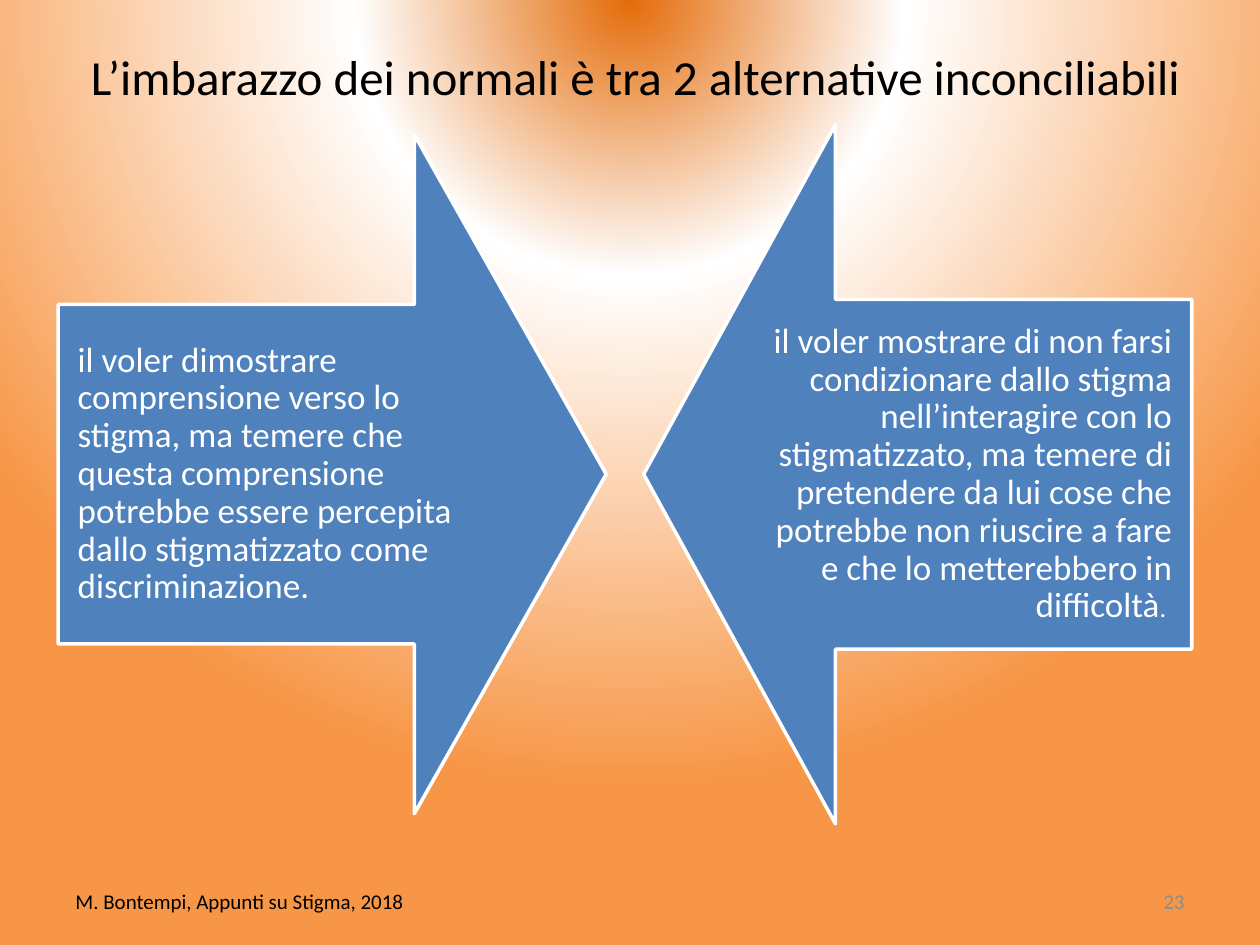
from pptx import Presentation
from pptx.dml.color import RGBColor
from pptx.enum.shapes import MSO_SHAPE as Shape
from pptx.enum.text import MSO_ANCHOR as Anchor, PP_ALIGN as Align
from pptx.oxml import parse_xml
from pptx.oxml.ns import nsdecls
from pptx.util import Pt

BLACK = RGBColor(0x00, 0x00, 0x00)
WHITE = RGBColor(0xFF, 0xFF, 0xFF)
GREY = RGBColor(0x8C, 0x8C, 0x8C)
BLUE = RGBColor(0x4F, 0x81, 0xBD)
DARK_ORANGE = RGBColor(0xE4, 0x6C, 0x0A)
ORANGE = RGBColor(0xF7, 0x96, 0x46)

ARROW_MIDDLE = 271
ARROW_WIDTH = 313.2
LABEL_WIDTH = 258.5
LABEL_INSET = 11.2


class SlideBuilder:
    font = "Calibri"

    def __init__(self, presentation):
        self.slide = presentation.slides.add_slide(presentation.slide_layouts[5])

    def background(self, stops):
        self.slide.background.fill.solid()
        properties = self.slide._element.xpath("./p:cSld/p:bg/p:bgPr")[0]
        stop_list = "".join(
            f'<a:gs pos="{percent * 1000}"><a:srgbClr val="{color}"/></a:gs>'
            for percent, color in stops
        )
        gradient = parse_xml(
            f'<a:gradFill {nsdecls("a")} rotWithShape="1"><a:gsLst>{stop_list}</a:gsLst>'
            '<a:path path="circle"><a:fillToRect l="50000" t="-80000" r="50000" b="180000"/>'
            "</a:path></a:gradFill>"
        )
        properties.replace(properties[0], gradient)

    def place(self, shape, left, top, width, height):
        box = {"left": left, "top": top, "width": width, "height": height}
        for name, value in box.items():
            setattr(shape, name, Pt(value))

    def fill_text(self, shape, runs, color, align=Align.LEFT, spacing=1.0, inset=None):
        frame = shape.text_frame
        settings = {"word_wrap": True, "vertical_anchor": Anchor.MIDDLE}
        if inset is not None:
            for side in ("left", "top", "right", "bottom"):
                settings[f"margin_{side}"] = Pt(inset)
        for name, value in settings.items():
            setattr(frame, name, value)
        paragraph = frame.paragraphs[0]
        paragraph.alignment = align
        paragraph.line_spacing = spacing
        for text, size in runs:
            run = paragraph.add_run()
            run.text = text
            for name, value in {"name": self.font, "size": Pt(size)}.items():
                setattr(run.font, name, value)
            run.font.color.rgb = color

    def title(self, text, box, size):
        shape = self.slide.shapes.title
        self.place(shape, *box)
        self.fill_text(shape, [(text, size)], BLACK, Align.CENTER)

    def text(self, runs, box, color, **style):
        shape = self.slide.shapes.add_textbox(*map(Pt, box))
        self.fill_text(shape, runs, color, **style)

    def arrow(self, kind, left, height):
        top = ARROW_MIDDLE - height / 2
        shape = self.slide.shapes.add_shape(
            kind, Pt(left), Pt(top), Pt(ARROW_WIDTH), Pt(height)
        )
        shape.adjustments[0] = 0.5
        shape.adjustments[1] = 0.35
        shape.shadow.inherit = False
        shape.fill.solid()
        shape.fill.fore_color.rgb = BLUE
        shape.line.color.rgb = WHITE
        shape.line.width = Pt(2)

    def argument(self, kind, arrow_left, label_left, height, runs, align):
        self.arrow(kind, arrow_left, height)
        label_height = height / 2
        box = (label_left, ARROW_MIDDLE - label_height / 2, LABEL_WIDTH, label_height)
        self.text(runs, box, WHITE, align=align, spacing=0.9, inset=LABEL_INSET)


def main():
    presentation = Presentation()
    presentation.slide_width = Pt(720)
    presentation.slide_height = Pt(540)

    builder = SlideBuilder(presentation)
    builder.background([(0, DARK_ORANGE), (35, WHITE), (100, ORANGE)])
    builder.title(
        "L’imbarazzo dei normali è tra 2 alternative inconciliabili",
        (31, -1.5, 664, 90), 28,
    )
    builder.argument(
        Shape.RIGHT_ARROW, 33.2, 33.2, 388,
        [("il voler dimostrare comprensione verso lo stigma, ma temere che questa "
          "comprensione potrebbe essere percepita dallo stigmatizzato come "
          "discriminazione.", 20)],
        Align.LEFT,
    )
    builder.argument(
        Shape.LEFT_ARROW, 367.8, 422.5, 399.6,
        [("il voler mostrare di non farsi condizionare dallo stigma nell’interagire "
          "con lo stigmatizzato, ma temere di pretendere da lui cose che potrebbe non "
          "riuscire a fare e che lo metterebbero in difficoltà", 20), (". ", 15)],
        Align.RIGHT,
    )
    builder.text([("M. Bontempi, Appunti su Stigma, 2018", 12)], (36, 500.5, 216, 28.8), BLACK)
    builder.text([("23", 12)], (516, 500.5, 168, 28.8), GREY, align=Align.RIGHT)

    presentation.save("out.pptx")


if __name__ == "__main__":
    main()
